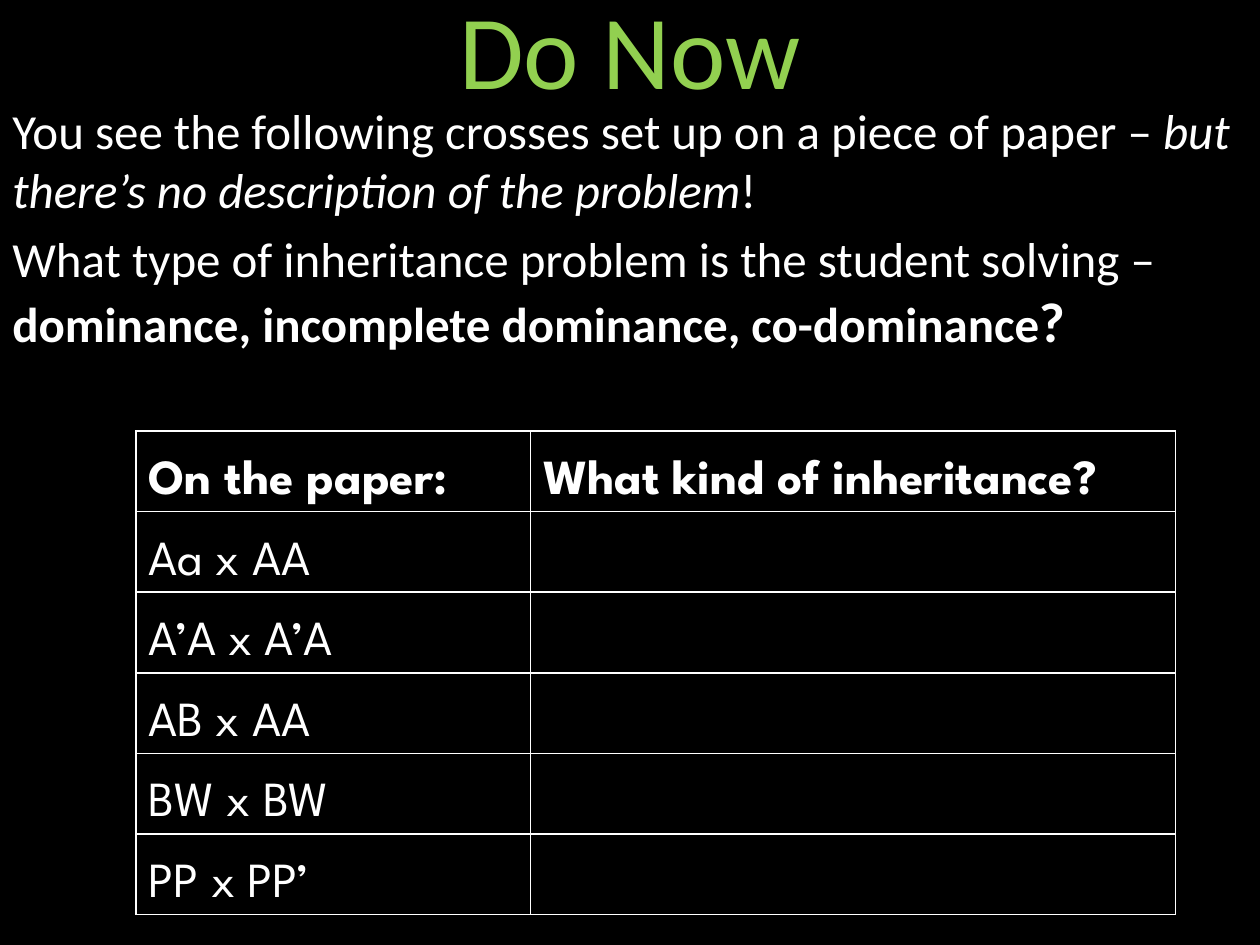
from dataclasses import dataclass

from lxml import etree
from pptx import Presentation
from pptx.dml.color import RGBColor
from pptx.enum.text import MSO_ANCHOR, PP_ALIGN
from pptx.oxml.ns import qn
from pptx.util import Inches, Pt

CENTER = PP_ALIGN.CENTER
MIDDLE = MSO_ANCHOR.MIDDLE
BOTTOM = MSO_ANCHOR.BOTTOM
TITLE_ONLY = 5


@dataclass(frozen=True)
class Theme:
    background: str = "000000"
    text: str = "FFFFFF"
    accent: str = "92D050"
    body_font: str = "Calibri"
    table_font: str = "League Spartan"
    title_size: int = 60
    body_size: int = 28
    emphasis_size: int = 32
    paragraph_gap: float = 5.6
    border_width: int = 1


THEME = Theme()

# Each span is its wording and the formatting that differs from body text
PROMPT = [
    [
        ("You see the following crosses set up on a piece of paper – ", {}),
        ("but there’s no description of the problem", {"italic": True}),
        ("!", {}),
    ],
    [
        ("What type of inheritance problem is the student solving – ", {}),
        ("dominance, incomplete dominance, co-dominance", {"bold": True}),
        ("?", {"bold": True, "size": THEME.emphasis_size}),
    ],
]
HEADINGS = ["On the paper:", "What kind of inheritance?"]
CROSSES = ["Aa x AA", "A’A x A’A", "AB x AA", "BW x BW", "PP x PP’"]
COLUMN_WIDTHS = [3.13, 5.12]
ROW_HEIGHT = 0.64


def add_span(para, text, size=THEME.body_size, color=THEME.text,
             font=THEME.body_font, bold=False, italic=False):
    span = para.add_run()
    span.text = text
    span.font.name = font
    span.font.size = Pt(size)
    span.font.bold = bold
    span.font.italic = italic
    span.font.color.rgb = RGBColor.from_string(color)


def add_title(page, text):
    title = page.shapes.title
    title.left, title.top = Inches(0.5), Inches(-0.25)
    title.width, title.height = Inches(9), Inches(1.25)
    title.text_frame.vertical_anchor = MIDDLE
    para = title.text_frame.paragraphs[0]
    para.alignment = CENTER
    add_span(para, text, size=THEME.title_size, color=THEME.accent)


def add_prompt(page, paragraphs):
    box = page.shapes.add_textbox(Inches(0), Inches(0.75), Inches(10), Inches(6))
    frame = box.text_frame
    frame.word_wrap = True
    for index, spans in enumerate(paragraphs):
        para = frame.add_paragraph() if index else frame.paragraphs[0]
        para.space_before = Pt(THEME.paragraph_gap)
        for text, style in spans:
            add_span(para, text, **style)


def style_cell(cell):
    # Borders must come before the fill in the cell properties
    properties = cell._tc.get_or_add_tcPr()
    for side in ("lnL", "lnR", "lnT", "lnB"):
        line = etree.SubElement(properties, qn(f"a:{side}"),
                                w=str(Pt(THEME.border_width)))
        fill = etree.SubElement(line, qn("a:solidFill"))
        etree.SubElement(fill, qn("a:srgbClr"), val=THEME.text)
    cell.fill.solid()
    cell.fill.fore_color.rgb = RGBColor.from_string(THEME.background)
    cell.vertical_anchor = BOTTOM


def add_cross_table(page):
    rows = [HEADINGS] + [[cross, ""] for cross in CROSSES]
    table = page.shapes.add_table(
        len(rows), len(HEADINGS), Inches(1.08), Inches(3.42),
        Inches(sum(COLUMN_WIDTHS)), Inches(ROW_HEIGHT * len(rows))).table
    for column, width in zip(table.columns, COLUMN_WIDTHS):
        column.width = Inches(width)
    for row_index, texts in enumerate(rows):
        table.rows[row_index].height = Inches(ROW_HEIGHT)
        for column_index, text in enumerate(texts):
            cell = table.cell(row_index, column_index)
            style_cell(cell)
            if text:
                add_span(cell.text_frame.paragraphs[0], text,
                         font=THEME.table_font, bold=row_index == 0)


def main():
    deck = Presentation()
    deck.slide_width, deck.slide_height = Inches(10), Inches(7.5)
    page = deck.slides.add_slide(deck.slide_layouts[TITLE_ONLY])

    # Black page
    page.background.fill.solid()
    page.background.fill.fore_color.rgb = RGBColor.from_string(THEME.background)

    # Heading, question and answer table
    add_title(page, "Do Now")
    add_prompt(page, PROMPT)
    add_cross_table(page)

    deck.save("out.pptx")


if __name__ == "__main__":
    main()
